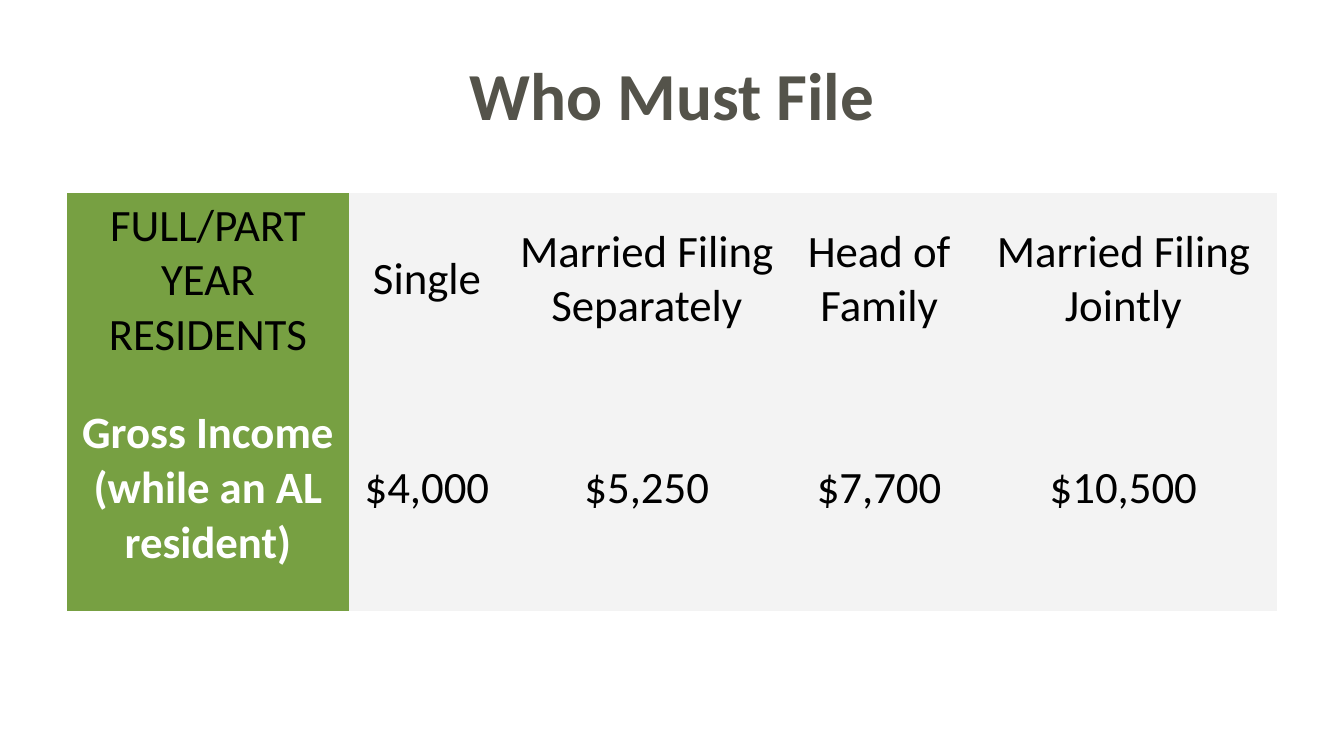
from pptx import Presentation
from pptx.dml.color import RGBColor
from pptx.enum.text import MSO_ANCHOR, PP_ALIGN
from pptx.oxml.ns import qn
from pptx.util import Pt

PX = 9525
MIDDLE = MSO_ANCHOR.MIDDLE
CENTER = PP_ALIGN.CENTER
OLIVE = RGBColor(0x54, 0x53, 0x4A)
GREEN = RGBColor(0x77, 0xA0, 0x42)
PALE = RGBColor(0xF3, 0xF3, 0xF3)
BLACK = RGBColor(0, 0, 0)
WHITE = RGBColor(0xFF, 0xFF, 0xFF)
NO_STYLE_NO_GRID = "{2D5ABB26-0587-4C30-8999-92F81FD0307C}"

LEFT, WIDTH = 48, 864
COLUMN_WIDTHS = [201, 112, 202, 130, 219]
ROW_HEIGHTS = [120, 175]
FILING_LIMITS = [
    ["FULL/PART YEAR RESIDENTS", "Single", "Married Filing Separately",
     "Head of Family", "Married Filing Jointly"],
    ["Gross Income (while an AL resident)", "$4,000", "$5,250", "$7,700", "$10,500"],
]


def write(frame, text, size, color, bold):
    paragraph = frame.paragraphs[0]
    paragraph.alignment = CENTER
    run = paragraph.add_run()
    run.text = text
    run.font.color.rgb = color
    for name, value in {"name": "Calibri", "size": Pt(size), "bold": bold}.items():
        setattr(run.font, name, value)


prs = Presentation()
prs.slide_width = 960 * PX
prs.slide_height = 540 * PX
slide = prs.slides.add_slide(prs.slide_layouts[6])

heading = slide.shapes.add_textbox(LEFT * PX, 22 * PX, WIDTH * PX, 90 * PX).text_frame
heading_format = {
    "word_wrap": True, "vertical_anchor": MIDDLE,
    "margin_left": 7 * PX, "margin_right": 7 * PX,
    "margin_top": 4 * PX, "margin_bottom": 4 * PX,
}
for name, value in heading_format.items():
    setattr(heading, name, value)
write(heading, "Who Must File", 36, OLIVE, True)

limits = slide.shapes.add_table(
    len(ROW_HEIGHTS), len(COLUMN_WIDTHS),
    LEFT * PX, 138 * PX, WIDTH * PX, sum(ROW_HEIGHTS) * PX,
).table
limits.first_row = False
limits.horz_banding = False
limits._tbl.tblPr.find(qn("a:tableStyleId")).text = NO_STYLE_NO_GRID
for column, width in zip(limits.columns, COLUMN_WIDTHS):
    column.width = width * PX
for row, height in zip(limits.rows, ROW_HEIGHTS):
    row.height = height * PX

cell_format = {
    "vertical_anchor": MIDDLE,
    "margin_left": 8 * PX, "margin_right": 8 * PX,
    "margin_top": 4 * PX, "margin_bottom": 4 * PX,
}
for r, entries in enumerate(FILING_LIMITS):
    for c, entry in enumerate(entries):
        cell = limits.cell(r, c)
        for name, value in cell_format.items():
            setattr(cell, name, value)
        cell.fill.solid()
        cell.fill.fore_color.rgb = GREEN if c == 0 else PALE
        is_income_label = r == 1 and c == 0
        write(cell.text_frame, entry, 24, WHITE if is_income_label else BLACK, is_income_label)

prs.save("out.pptx")
